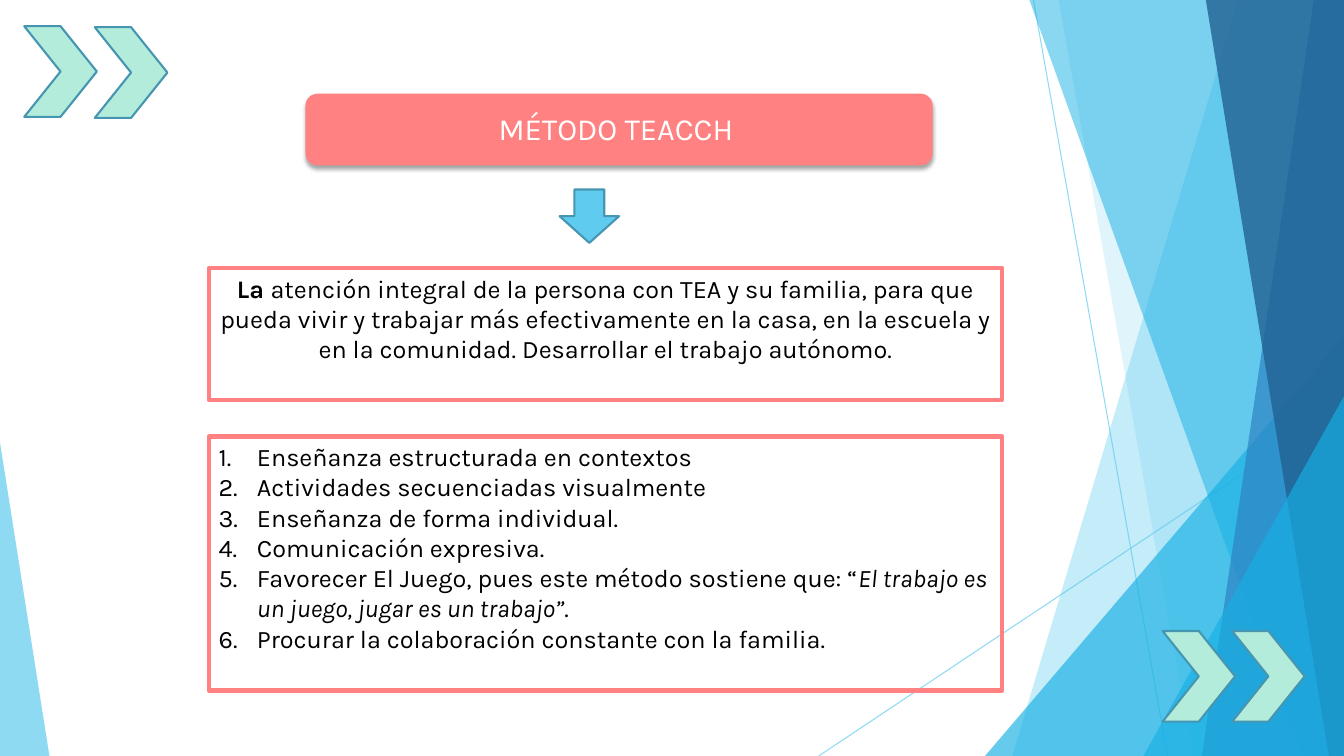
from dataclasses import dataclass

from lxml import etree
from pptx import Presentation
from pptx.dml.color import RGBColor
from pptx.enum.shapes import MSO_CONNECTOR, MSO_SHAPE
from pptx.enum.text import MSO_ANCHOR, MSO_AUTO_SIZE, PP_ALIGN
from pptx.oxml.ns import qn
from pptx.shapes.autoshape import Shape
from pptx.shapes.base import BaseShape
from pptx.slide import Slide
from pptx.text.text import _Paragraph as Paragraph
from pptx.util import Inches, Pt

STRAIGHT = MSO_CONNECTOR.STRAIGHT
TRIANGLE = MSO_SHAPE.ISOSCELES_TRIANGLE
CHEVRON = MSO_SHAPE.CHEVRON
DOWN_ARROW = MSO_SHAPE.DOWN_ARROW
RECTANGLE = MSO_SHAPE.RECTANGLE
ROUNDED = MSO_SHAPE.ROUNDED_RECTANGLE
TOP, MIDDLE = MSO_ANCHOR.TOP, MSO_ANCHOR.MIDDLE
LEFT, CENTER = PP_ALIGN.LEFT, PP_ALIGN.CENTER
NO_AUTOFIT = MSO_AUTO_SIZE.NONE

SKY = RGBColor(0x5F, 0xCB, 0xEF)
CYAN = RGBColor(0x17, 0xB0, 0xE4)
BLUE = RGBColor(0x2E, 0x83, 0xC3)
NAVY = RGBColor(0x22, 0x62, 0x92)
MINT = RGBColor(0xB3, 0xEC, 0xDA)
TEAL = RGBColor(0x46, 0x96, 0xB1)
CORAL = RGBColor(0xFF, 0x81, 0x81)
WHITE = RGBColor(0xFF, 0xFF, 0xFF)
BLACK = RGBColor(0, 0, 0)

WIDTH, HEIGHT = 13.33, 7.5
FONT = "Karla"
Box = tuple[float, float, float, float]


@dataclass(frozen=True)
class Span:
    text: str
    bold: bool = False
    italic: bool = False


@dataclass(frozen=True)
class Facet:
    top_x: float
    bottom_x: float
    color: RGBColor
    opacity: int


@dataclass(frozen=True)
class Wedge:
    box: Box
    apex: float
    color: RGBColor
    opacity: int


@dataclass(frozen=True)
class Panel:
    box: Box
    align: PP_ALIGN
    numbered: bool
    paragraphs: list[list[Span]]


RAYS: list[Box] = [(10.25, 0, 11.58, HEIGHT), (WIDTH, 4.03, 8.12, HEIGHT)]
BACKDROP: list[Facet | Wedge] = [
    Facet(12.28, 10.04, SKY, 36),
    Facet(10.5, 11.83, SKY, 20),
    Wedge((9.77, 3.33, 3.56, 4.17), 1, CYAN, 66),
    Facet(10.21, 12.91, CYAN, 50),
    Facet(13.03, 11.92, BLUE, 70),
    Facet(11.96, 13.18, NAVY, 80),
    Wedge((11.34, 3.93, 1.99, 3.57), 1, CYAN, 66),
    Wedge((0, 4.39, 0.49, 3.11), 0, SKY, 70),
]
CHEVRONS = [(11.53, 6.26), (12.22, 6.26), (0.24, 0.26), (0.94, 0.27)]
PANELS = [
    Panel((2.07, 2.66, 7.87, 1.31), CENTER, False, [[
        Span("La ", bold=True),
        Span("atención integral de la persona con TEA y su familia, para que "
             "pueda vivir y trabajar más efectivamente en la casa, en la escuela "
             "y en la comunidad. Desarrollar el trabajo autónomo."),
    ]]),
    Panel((2.07, 4.33, 7.87, 2.52), LEFT, True, [
        [Span("Enseñanza estructurada en contextos")],
        [Span("Actividades secuenciadas visualmente")],
        [Span("Enseñanza de forma individual.")],
        [Span("Comunicación expresiva.")],
        [Span("Favorecer El Juego, pues este método sostiene que: “"),
         Span("El trabajo es un juego, jugar es un trabajo”", italic=True),
         Span(".")],
        [Span("Procurar la colaboración constante con la familia.")],
    ]),
]


def apply(target: object, formats: dict[str, object]) -> None:
    for name, value in formats.items():
        setattr(target, name, value)


def set_opacity(shape: BaseShape, percent: int) -> None:
    for color in list(shape.element.iter(qn("a:srgbClr"))):
        etree.SubElement(color, qn("a:alpha"), val=str(percent * 1000))


def paint(shape: Shape, fill: RGBColor | None, line: RGBColor | None = None,
          weight: float = 1.5) -> None:
    shape.shadow.inherit = False
    if fill is None:
        shape.fill.background()
    else:
        shape.fill.solid()
        shape.fill.fore_color.rgb = fill
    if line is None:
        shape.line.fill.background()
    else:
        shape.line.color.rgb = line
        shape.line.width = Pt(weight)


def add_preset(slide: Slide, kind: MSO_SHAPE, box: Box) -> Shape:
    return slide.shapes.add_shape(kind, *map(Inches, box))


def add_ray(slide: Slide, ends: Box) -> None:
    ray = slide.shapes.add_connector(STRAIGHT, *map(Inches, ends))
    ray.line.color.rgb = SKY
    ray.line.width = Pt(0.75)
    set_opacity(ray, 70)
    etree.SubElement(ray.element.spPr, qn("a:effectLst"))


def add_backdrop(slide: Slide, part: Facet | Wedge) -> None:
    if isinstance(part, Wedge):
        shape = add_preset(slide, TRIANGLE, part.box)
        shape.adjustments[0] = part.apex
    else:
        outline = slide.shapes.build_freeform(Inches(part.top_x), 0)
        corners = [(WIDTH, 0), (WIDTH, HEIGHT), (part.bottom_x, HEIGHT)]
        outline.add_line_segments([(Inches(x), Inches(y)) for x, y in corners])
        shape = outline.convert_to_shape()
    paint(shape, part.color)
    set_opacity(shape, part.opacity)


def add_spans(para: Paragraph, spans: list[Span], size: int, color: RGBColor) -> None:
    for item in spans:
        span = para.add_run()
        span.text = item.text
        apply(span.font, {"name": FONT, "size": Pt(size),
                          "bold": item.bold, "italic": item.italic})
        span.font.color.rgb = color


def number(para: Paragraph) -> None:
    properties = para._p.get_or_add_pPr()
    properties.set("marL", str(Inches(0.38)))
    properties.set("indent", str(Inches(-0.38)))
    etree.SubElement(properties, qn("a:buFont"), typeface="+mj-lt")
    etree.SubElement(properties, qn("a:buAutoNum"), type="arabicPeriod")


def add_panel(slide: Slide, panel: Panel) -> None:
    box = add_preset(slide, RECTANGLE, panel.box)
    paint(box, None, CORAL, 3)
    frame = box.text_frame
    apply(frame, {"word_wrap": True, "vertical_anchor": TOP, "auto_size": NO_AUTOFIT})
    for index, spans in enumerate(panel.paragraphs):
        para = frame.add_paragraph() if index else frame.paragraphs[0]
        para.alignment = panel.align
        if panel.numbered:
            number(para)
        add_spans(para, spans, 18, BLACK)


def add_title(slide: Slide) -> None:
    banner = add_preset(slide, ROUNDED, (3.03, 0.93, 6.22, 0.71))
    paint(banner, CORAL)
    effects = banner.element.spPr.find(qn("a:effectLst"))
    shadow = etree.SubElement(effects, qn("a:outerShdw"), blurRad=str(Pt(3)),
                              dist=str(Pt(2)), dir="5400000", rotWithShape="0")
    color = etree.SubElement(shadow, qn("a:srgbClr"), val=str(BLACK))
    etree.SubElement(color, qn("a:alpha"), val="35000")
    title = slide.shapes.title
    apply(title, {"left": Inches(3.07), "top": Inches(0.97),
                  "width": Inches(6.15), "height": Inches(0.64)})
    frame = title.text_frame
    apply(frame, {"word_wrap": True, "vertical_anchor": MIDDLE, "auto_size": NO_AUTOFIT,
                  "margin_left": Inches(0.24), "margin_right": Inches(0.24),
                  "margin_top": 0, "margin_bottom": 0})
    para = frame.paragraphs[0]
    apply(para, {"alignment": CENTER, "line_spacing": 0.9})
    add_spans(para, [Span("MÉTODO TEACCH ")], 22, WHITE)
    banner.element.addnext(title.element)


def main() -> None:
    """Build the TEACCH method slide."""
    deck = Presentation()
    apply(deck, {"slide_width": Inches(WIDTH), "slide_height": Inches(HEIGHT)})
    slide = deck.slides.add_slide(deck.slide_layouts.get_by_name("Title Only"))
    for ends in RAYS:
        add_ray(slide, ends)
    for part in BACKDROP:
        add_backdrop(slide, part)
    for left, top in CHEVRONS:
        paint(add_preset(slide, CHEVRON, (left, top, 0.72, 0.9)), MINT, TEAL)
    add_title(slide)
    paint(add_preset(slide, DOWN_ARROW, (5.55, 1.88, 0.59, 0.53)), SKY, TEAL)
    for panel in PANELS:
        add_panel(slide, panel)
    deck.save("out.pptx")


if __name__ == "__main__":
    main()
